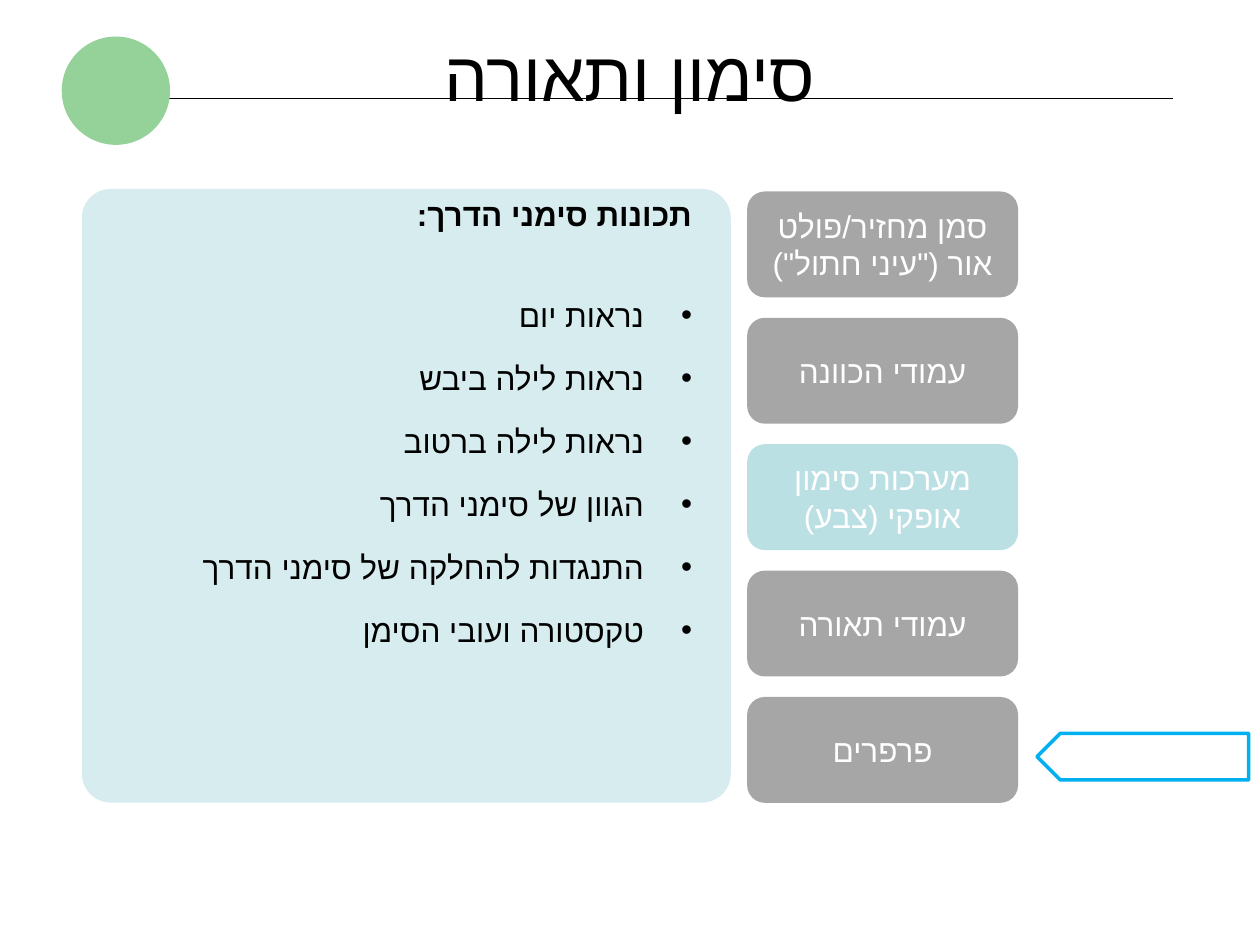
from lxml.etree import SubElement
from pptx import Presentation
from pptx.dml.color import RGBColor
from pptx.enum.shapes import MSO_CONNECTOR, MSO_SHAPE
from pptx.enum.text import MSO_ANCHOR, PP_ALIGN
from pptx.oxml.ns import qn
from pptx.util import Inches, Pt

FONT = "Arial"
BLACK, WHITE, GRAY = "000000", "FFFFFF", "A6A6A6"
TEAL, PALE, GREEN, BLUE = "BBE0E3", "D6ECEE", "94D29A", "00B0F0"

TOPICS = [
    ('סמן מחזיר/פולט אור ("עיני חתול")', GRAY),
    ("עמודי הכוונה", GRAY),
    ("מערכות סימון אופקי (צבע)", TEAL),
    ("עמודי תאורה", GRAY),
    ("פרפרים", GRAY),
]
HEADING = "תכונות סימני הדרך:"
PROPERTIES = [
    "נראות יום",
    "נראות לילה ביבש",
    "נראות לילה ברטוב",
    "הגוון של סימני הדרך",
    "התנגדות להחלקה של סימני הדרך",
    "טקסטורה ועובי הסימן",
]


def rgb(color):
    return RGBColor.from_string(color)


def add_box(s, kind, x, y, w, h, fill=None, line=None, adj=None):
    sp = s.shapes.add_shape(kind, Inches(x), Inches(y), Inches(w), Inches(h))
    sp.shadow.inherit = False
    if fill:
        sp.fill.solid()
        sp.fill.fore_color.rgb = rgb(fill)
    else:
        sp.fill.background()
    if line:
        sp.line.color.rgb = rgb(line)
        sp.line.width = Pt(2)
    else:
        sp.line.fill.background()
    if adj is not None:
        sp.adjustments[0] = adj
    return sp


def add_rule(s, x1, x2, y):
    c = s.shapes.add_connector(MSO_CONNECTOR.STRAIGHT, Inches(x1), Inches(y),
                               Inches(x2), Inches(y))
    c.line.color.rgb = rgb(BLACK)
    c.line.width = Pt(0.75)
    SubElement(c._element.spPr, qn("a:effectLst"))


def add_text_box(s, x, y, w, h, anchor):
    tf = s.shapes.add_textbox(Inches(x), Inches(y), Inches(w), Inches(h)).text_frame
    tf.word_wrap = True
    tf.vertical_anchor = anchor
    return tf


def write(p, text, size, color, align, bold=False, bullet=False, **spacing):
    # Right-to-left paragraph, with a hanging bullet if asked
    pPr = p._p.get_or_add_pPr()
    pPr.set("rtl", "1")
    if bullet:
        pPr.set("marL", str(Inches(0.38)))
        pPr.set("indent", str(Inches(-0.38)))
        SubElement(pPr, qn("a:buFont"), typeface=FONT)
        SubElement(pPr, qn("a:buChar"), char="•")
    for name, value in {"alignment": align, **spacing}.items():
        setattr(p, name, value)
    r = p.add_run()
    r.text = text
    for name, value in {"name": FONT, "size": Pt(size), "bold": bold}.items():
        setattr(r.font, name, value)
    r.font.color.rgb = rgb(color)
    # Hebrew takes the complex-script font
    SubElement(r._r.get_or_add_rPr(), qn("a:cs"), typeface=FONT)


def add_topics(s):
    for i, (text, fill) in enumerate(TOPICS):
        sp = add_box(s, MSO_SHAPE.ROUNDED_RECTANGLE, 5.93, 1.52 + i * 1.003,
                     2.15, 0.84, fill)
        tf = sp.text_frame
        tf.word_wrap = True
        tf.vertical_anchor = MSO_ANCHOR.MIDDLE
        write(tf.paragraphs[0], text, 18, WHITE, PP_ALIGN.CENTER)


def add_panel(s):
    add_box(s, MSO_SHAPE.ROUNDED_RECTANGLE, 0.65, 1.5, 5.15, 4.87, PALE, adj=0.047)
    tf = add_text_box(s, 1.17, 1.5, 4.42, 4.31, MSO_ANCHOR.TOP)
    write(tf.paragraphs[0], HEADING, 18, BLACK, PP_ALIGN.RIGHT, bold=True,
          space_after=Pt(21.5))
    for text in PROPERTIES:
        write(tf.add_paragraph(), text, 18, BLACK, PP_ALIGN.RIGHT, bullet=True,
              line_spacing=1.5, space_before=Pt(3.6))


def main():
    prs = Presentation()
    prs.slide_width, prs.slide_height = Inches(10), Inches(7.5)
    s = prs.slides.add_slide(prs.slide_layouts[6])

    # Header
    add_rule(s, 0.69, 9.31, 0.78)
    tf = add_text_box(s, 0.69, 0.29, 8.62, 0.59, MSO_ANCHOR.MIDDLE)
    write(tf.paragraphs[0], "סימון ותאורה", 39.6, BLACK, PP_ALIGN.CENTER)
    add_box(s, MSO_SHAPE.OVAL, 0.49, 0.29, 0.86, 0.86, GREEN)

    # Pointer to the last topic
    pointer = add_box(s, MSO_SHAPE.PENTAGON, 8.23, 5.82, 1.68, 0.37, line=BLUE)
    pointer.rotation = 180

    # Topics and the panel beside them
    add_topics(s)
    add_panel(s)
    prs.save("out.pptx")


if __name__ == "__main__":
    main()
